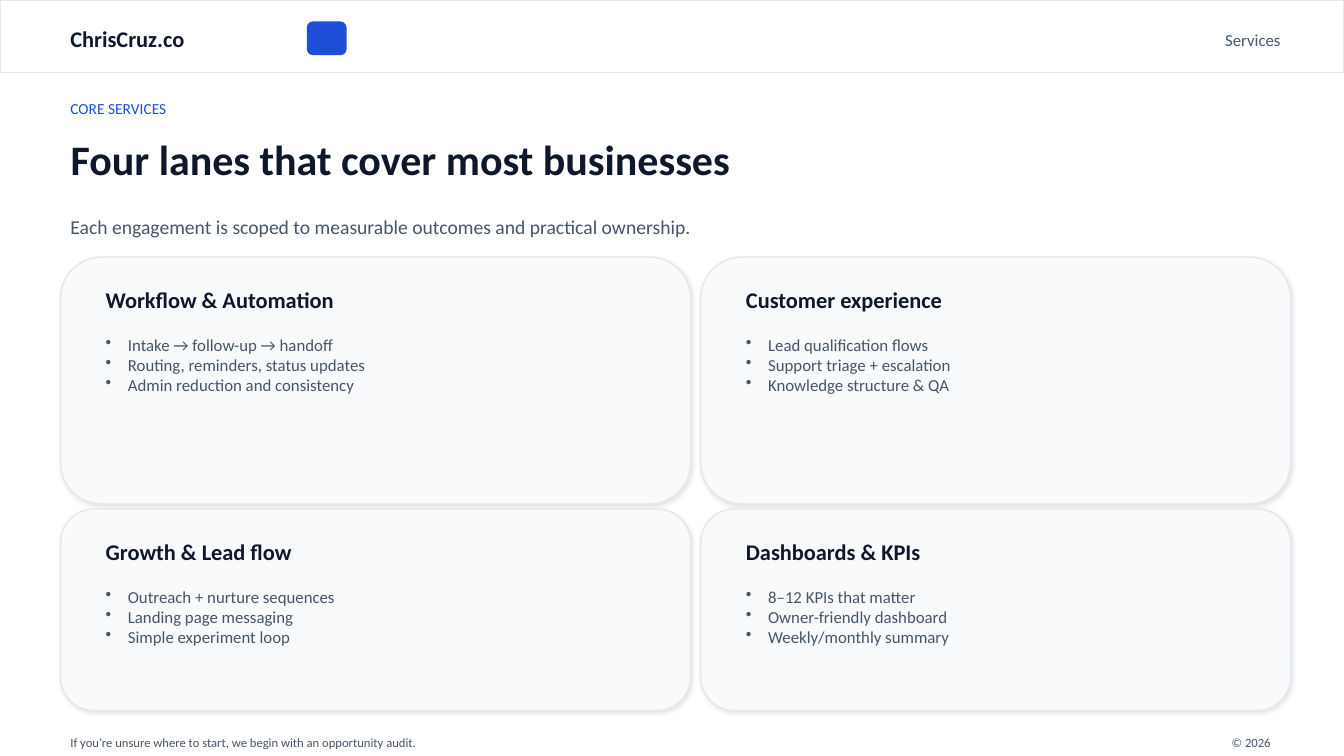
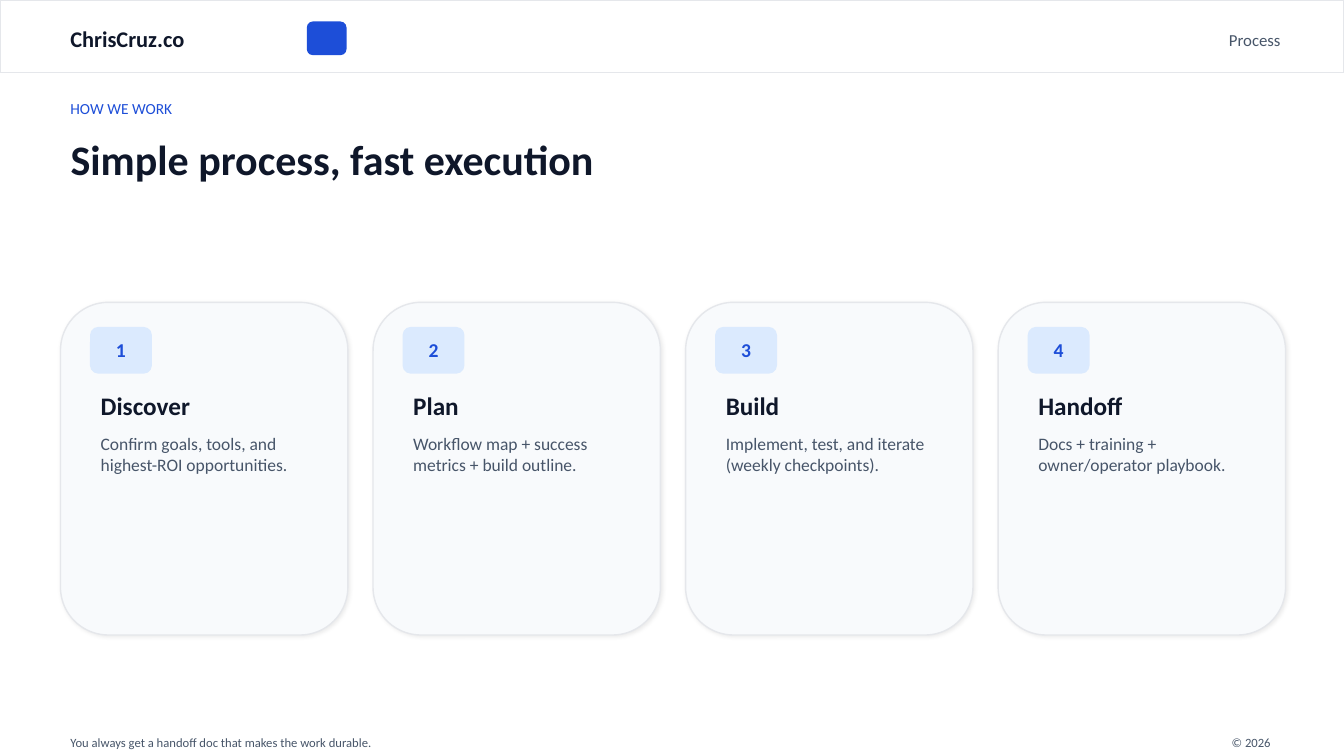
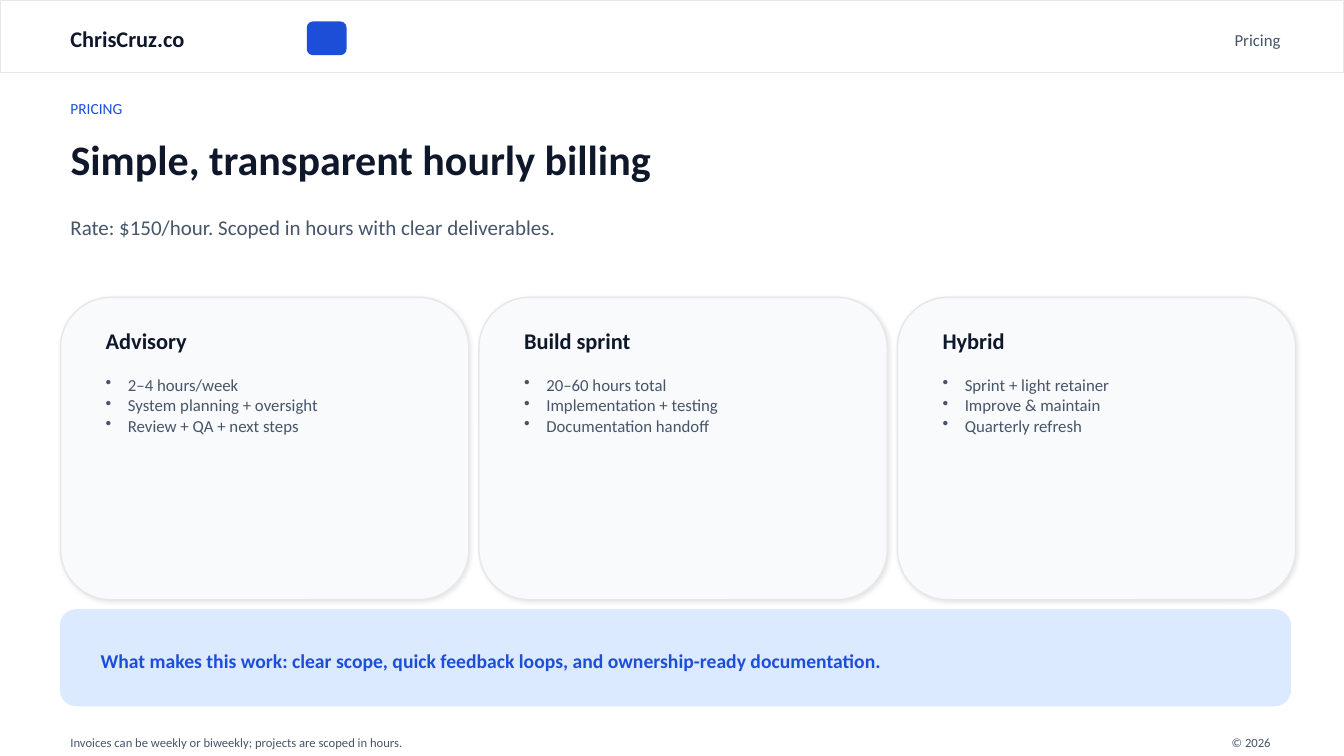
from dataclasses import dataclass

import pptx
import pptx.dml.color
import pptx.enum.shapes
import pptx.enum.text
import pptx.oxml
import pptx.oxml.ns
import pptx.util
from pptx.util import Inches

ALIGN = pptx.enum.text.PP_ALIGN
ANCHOR = pptx.enum.text.MSO_ANCHOR
SHAPE = pptx.enum.shapes.MSO_SHAPE


@dataclass(frozen=True)
class Theme:
    font: str = "Calibri"
    white: str = "FFFFFF"
    ink: str = "0F172A"
    muted: str = "475569"
    accent: str = "1D4ED8"
    tint: str = "DBEAFE"
    panel: str = "F8FAFC"
    border: str = "E5E7EB"
    title: float = 30
    step_heading: float = 18
    heading: float = 16
    lead: float = 14
    step_body: float = 12.5
    body: float = 12
    kicker: float = 11
    footer: float = 9


THEME = Theme()
SLIDE_WIDTH, SLIDE_HEIGHT = 13.33, 7.5
MARGIN = 0.6
CONTENT_WIDTH = 12.2
BULLET_INDENT = 0.22

SERVICES = [
    ("Workflow & Automation",
     ["Intake → follow-up → handoff", "Routing, reminders, status updates",
      "Admin reduction and consistency"]),
    ("Customer experience",
     ["Lead qualification flows", "Support triage + escalation",
      "Knowledge structure & QA"]),
    ("Growth & Lead flow",
     ["Outreach + nurture sequences", "Landing page messaging",
      "Simple experiment loop"]),
    ("Dashboards & KPIs",
     ["8–12 KPIs that matter", "Owner-friendly dashboard",
      "Weekly/monthly summary"]),
]
STEPS = [
    ("Discover", "Confirm goals, tools, and highest-ROI opportunities."),
    ("Plan", "Workflow map + success metrics + build outline."),
    ("Build", "Implement, test, and iterate (weekly checkpoints)."),
    ("Handoff", "Docs + training + owner/operator playbook."),
]
PLANS = [
    ("Advisory",
     ["2–4 hours/week", "System planning + oversight",
      "Review + QA + next steps"]),
    ("Build sprint",
     ["20–60 hours total", "Implementation + testing",
      "Documentation handoff"]),
    ("Hybrid",
     ["Sprint + light retainer", "Improve & maintain",
      "Quarterly refresh"]),
]


def rgb(code):
    return pptx.dml.color.RGBColor.from_string(code)


def tracks(start, sizes, gap):
    """Return (offset, size) pairs laid end to end with an equal gap."""
    pairs = []
    for size in sizes:
        pairs.append((start, size))
        start += size + gap
    return pairs


def style(para, size, color, bold=False, align=ALIGN.LEFT):
    para.alignment = align
    para.font.name = THEME.font
    para.font.size = pptx.util.Pt(size)
    para.font.bold = bold
    para.font.color.rgb = rgb(color)


def add_bullet(para):
    props = para._p.get_or_add_pPr()
    props.set("marL", str(Inches(BULLET_INDENT)))
    props.set("indent", str(-Inches(BULLET_INDENT)))
    bullet = props.makeelement(pptx.oxml.ns.qn("a:buChar"), {"char": "•"})
    props.append(bullet)


def add_text(page, at, lines, size, color, bold=False, align=ALIGN.LEFT,
             anchor=ANCHOR.MIDDLE, bullets=False):
    box = page.shapes.add_textbox(*map(Inches, at))
    frame = box.text_frame
    frame.word_wrap = True
    frame.vertical_anchor = anchor
    frame.text = "\n".join(lines)
    for para in frame.paragraphs:
        if bullets:
            add_bullet(para)
        style(para, size, color, bold, align)


def add_panel(page, at, fill, line, preset=SHAPE.ROUNDED_RECTANGLE):
    panel = page.shapes.add_shape(preset, *map(Inches, at))
    panel.shadow.inherit = False
    panel.fill.solid()
    panel.fill.fore_color.rgb = rgb(fill)
    panel.line.color.rgb = rgb(line)
    panel.line.width = pptx.util.Pt(1)
    return panel


def add_card(page, at, opacity=10, distance=1.2):
    """Add a bordered panel with a soft shadow towards the lower right."""
    card = add_panel(page, at, THEME.panel, THEME.border)
    effects = card._element.spPr.find(pptx.oxml.ns.qn("a:effectLst"))
    effects.append(pptx.oxml.parse_xml(
        f'<a:outerShdw {pptx.oxml.ns.nsdecls("a")} '
        f'blurRad="{pptx.util.Pt(3)}" dist="{pptx.util.Pt(distance)}" '
        'dir="2700000" algn="bl" rotWithShape="0">'
        f'<a:srgbClr val="000000"><a:alpha val="{opacity * 1000}"/>'
        '</a:srgbClr></a:outerShdw>'))


def add_list_card(page, at, heading, items):
    left, top, width, height = at
    inner_left, inner_width = left + 0.35, width - 0.7
    add_card(page, at)
    add_text(page, (inner_left, top + 0.25, inner_width, 0.35), [heading],
             THEME.heading, THEME.ink, bold=True)
    add_text(page, (inner_left, top + 0.72, inner_width, height - 1.05), items,
             THEME.body, THEME.muted, anchor=ANCHOR.TOP, bullets=True)


def add_step_card(page, at, number, heading, body):
    left, top, width, height = at
    inner_left, inner_width = left + 0.3, width - 0.6
    add_card(page, at, opacity=8, distance=1.1)
    add_panel(page, (inner_left, top + 0.25, 0.6, 0.45), THEME.tint, THEME.tint)
    add_text(page, (inner_left, top + 0.32, 0.6, 0.3), [str(number)],
             THEME.lead, THEME.accent, bold=True, align=ALIGN.CENTER)
    add_text(page, (inner_left, top + 0.85, inner_width, 0.35), [heading],
             THEME.step_heading, THEME.ink, bold=True)
    add_text(page, (inner_left, top + 1.25, inner_width, height - 1.6), [body],
             THEME.step_body, THEME.muted, anchor=ANCHOR.TOP)


def set_title(page, text):
    title = page.shapes.title
    title.left, title.top = Inches(MARGIN), Inches(1.25)
    title.width, title.height = Inches(CONTENT_WIDTH), Inches(0.65)
    frame = title.text_frame
    frame.text = text
    frame.word_wrap = True
    frame.auto_size = pptx.enum.text.MSO_AUTO_SIZE.NONE
    frame.vertical_anchor = ANCHOR.MIDDLE
    style(frame.paragraphs[0], THEME.title, THEME.ink, bold=True)


def add_page(deck, section, kicker, title, footer):
    """Add a slide with the header band, kicker, title and footer."""
    page = deck.slides.add_slide(deck.slide_layouts.get_by_name("Title Only"))
    page.background.fill.solid()
    page.background.fill.fore_color.rgb = rgb(THEME.white)
    add_panel(page, (0, 0, SLIDE_WIDTH, 0.72), THEME.white, THEME.border,
              SHAPE.RECTANGLE)
    add_text(page, (MARGIN, 0.18, 3, 0.4), ["ChrisCruz.co"],
             THEME.heading, THEME.ink, bold=True)
    add_panel(page, (3.05, 0.22, 0.38, 0.32), THEME.accent, THEME.accent)
    add_text(page, (9.2, 0.2, 3.6, 0.4), [section],
             THEME.body, THEME.muted, align=ALIGN.RIGHT)
    add_text(page, (MARGIN, 0.95, CONTENT_WIDTH, 0.25), [kicker],
             THEME.kicker, THEME.accent)
    set_title(page, title)
    add_text(page, (MARGIN, 7.28, 10, 0.18), [footer],
             THEME.footer, THEME.muted)
    add_text(page, (11.7, 7.28, 1, 0.18), ["© 2026"],
             THEME.footer, THEME.muted, align=ALIGN.RIGHT)
    return page


def build_services(deck):
    page = add_page(
        deck, "Services", "CORE SERVICES",
        "Four lanes that cover most businesses",
        "If you’re unsure where to start, we begin with an opportunity audit.")
    add_text(page, (MARGIN, 2.05, CONTENT_WIDTH, 0.4),
             ["Each engagement is scoped to measurable outcomes and "
              "practical ownership."], THEME.lead, THEME.muted)
    columns = tracks(MARGIN, [6.25, 5.85], 0.1)
    rows = tracks(2.55, [2.45, 2], 0.05)
    cells = [(left, top, width, height)
             for top, height in rows for left, width in columns]
    for at, (heading, items) in zip(cells, SERVICES):
        add_list_card(page, at, heading, items)


def build_process(deck):
    page = add_page(
        deck, "Process", "HOW WE WORK", "Simple process, fast execution",
        "You always get a handoff doc that makes the work durable.")
    columns = tracks(MARGIN, [2.85] * len(STEPS), 0.25)
    for number, ((left, width), step) in enumerate(zip(columns, STEPS), 1):
        add_step_card(page, (left, 3, width, 3.3), number, *step)


def build_pricing(deck):
    page = add_page(
        deck, "Pricing", "PRICING", "Simple, transparent hourly billing",
        "Invoices can be weekly or biweekly; projects are scoped in hours.")
    add_text(page, (MARGIN, 1.95, 11.5, 0.6),
             ["Rate: $150/hour. Scoped in hours with clear deliverables."],
             THEME.lead + 1, THEME.muted)
    columns = tracks(MARGIN, [4.05, 4.05, 3.95], 0.1)
    for (left, width), (heading, items) in zip(columns, PLANS):
        add_list_card(page, (left, 2.95, width, 3), heading, items)
    add_panel(page, (MARGIN, 6.05, CONTENT_WIDTH, 0.95), THEME.tint, THEME.tint)
    add_text(page, (0.9, 6.33, 11.6, 0.45),
             ["What makes this work: clear scope, quick feedback loops, and "
              "ownership-ready documentation."],
             THEME.lead, THEME.accent, bold=True)


def main():
    deck = pptx.Presentation()
    deck.slide_width = Inches(SLIDE_WIDTH)
    deck.slide_height = Inches(SLIDE_HEIGHT)
    build_services(deck)
    build_process(deck)
    build_pricing(deck)
    deck.save("out.pptx")


if __name__ == "__main__":
    main()
